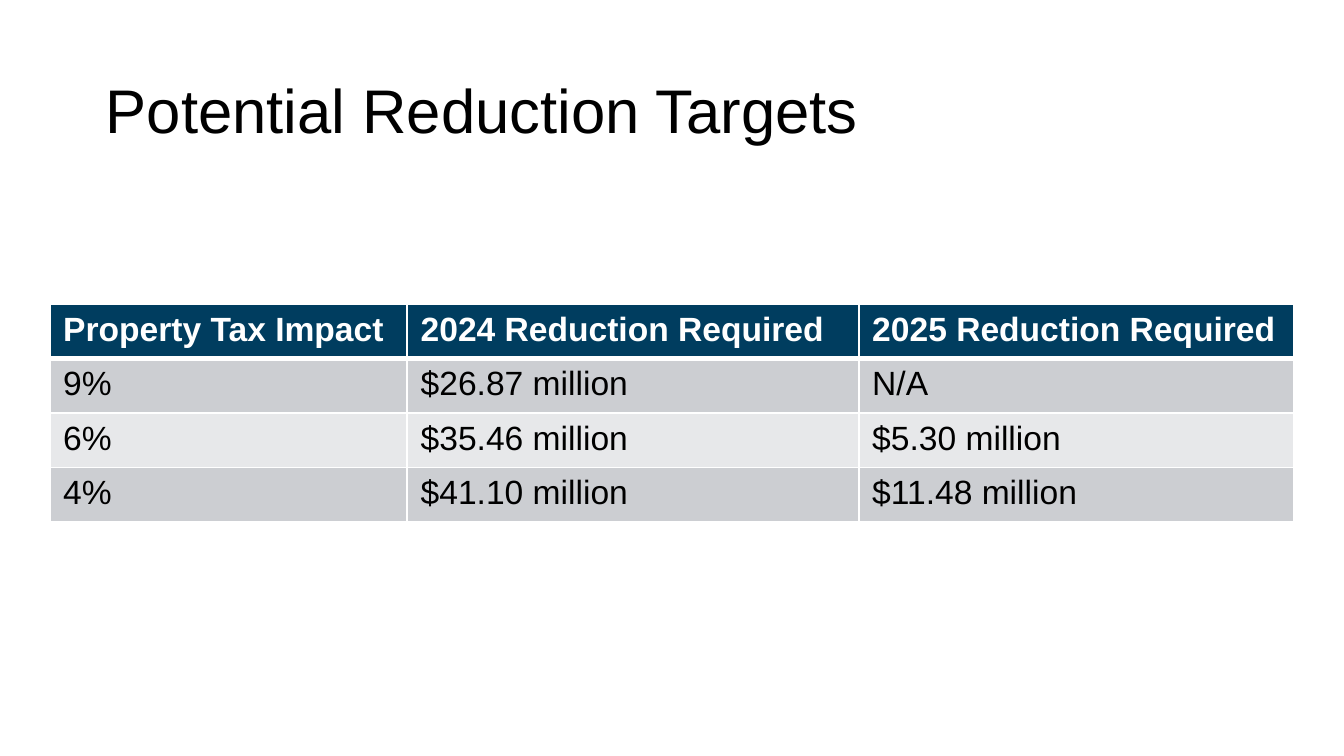
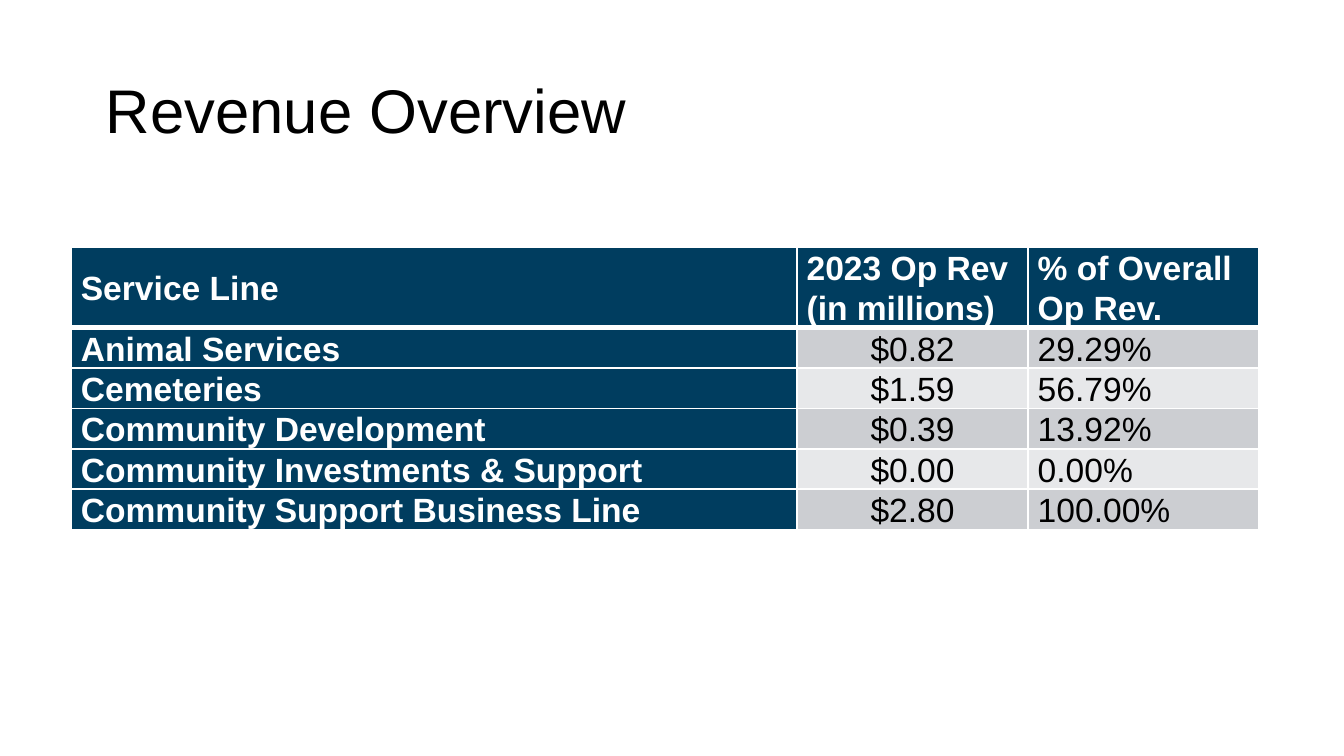
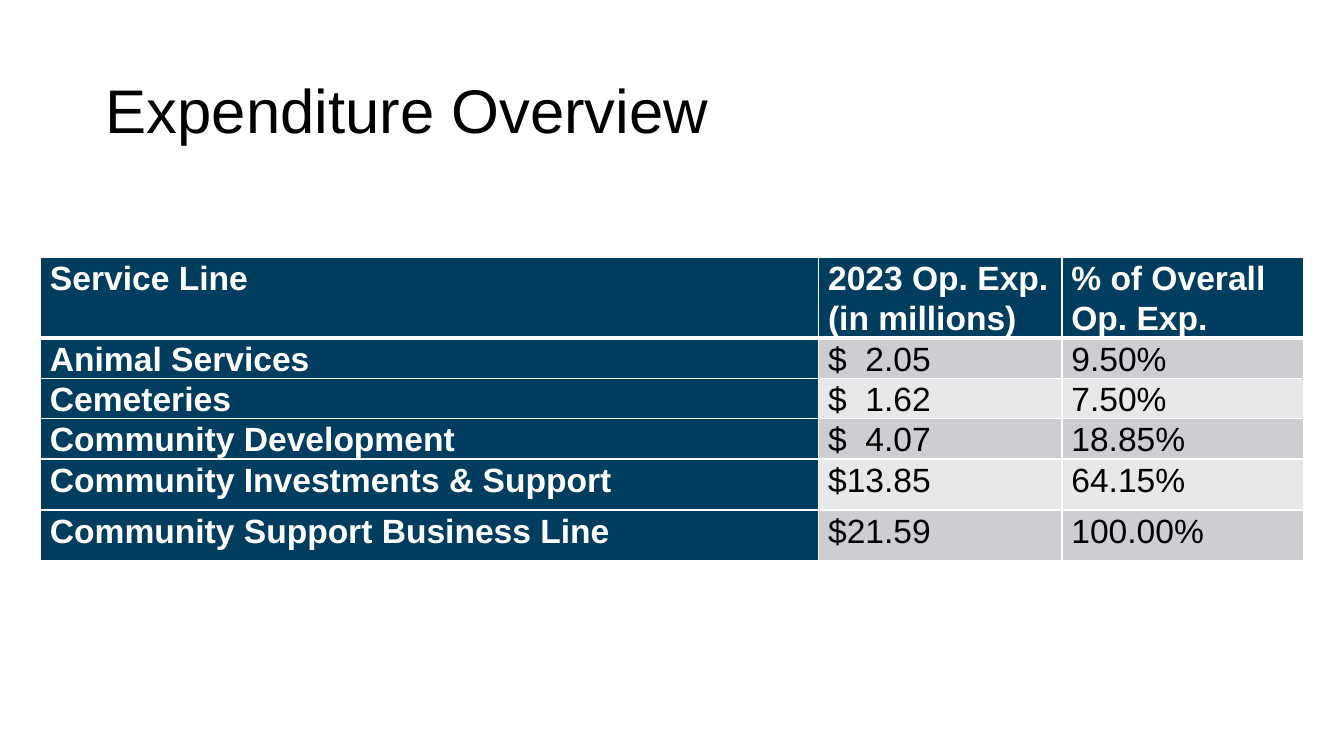
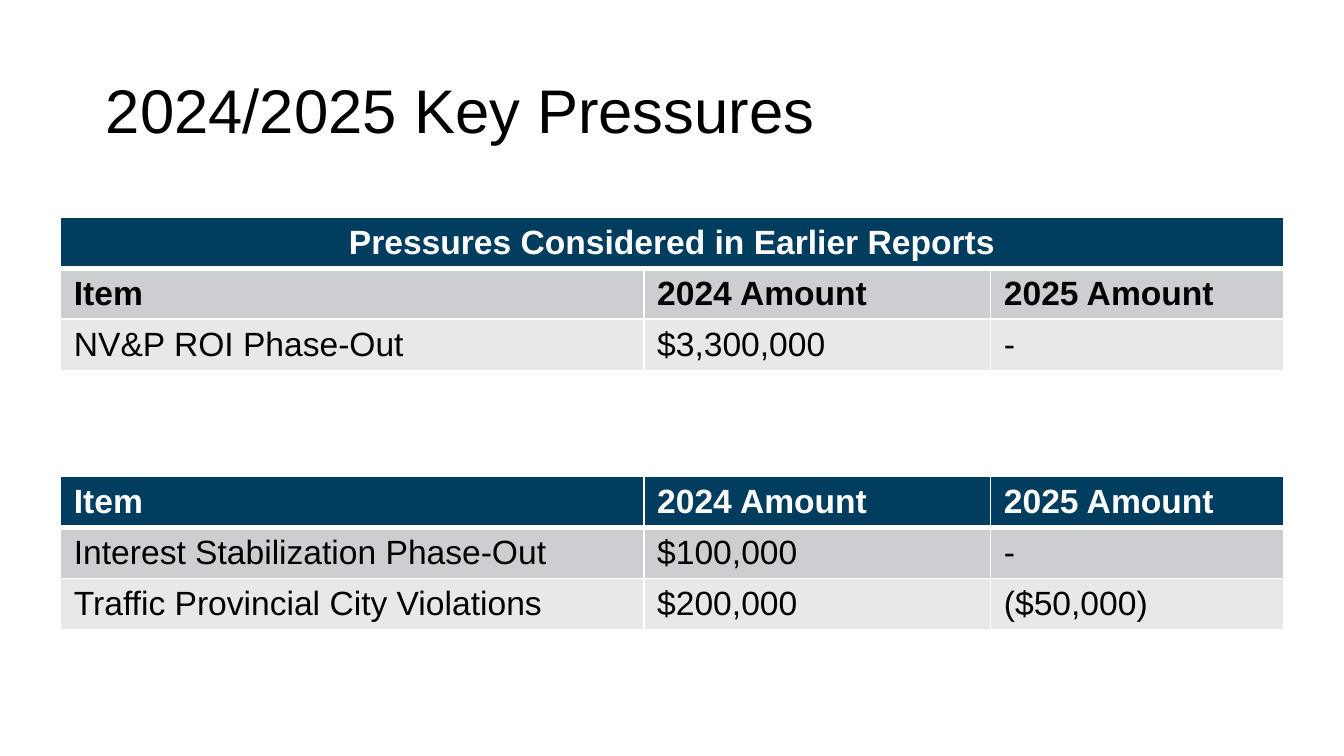
from dataclasses import dataclass

from pptx import Presentation
from pptx.dml.color import RGBColor
from pptx.enum.text import MSO_ANCHOR, MSO_AUTO_SIZE, PP_ALIGN
from pptx.oxml.xmlchemy import OxmlElement
from pptx.util import Emu, Inches, Pt

LEFT, CENTER, JUSTIFY = PP_ALIGN.LEFT, PP_ALIGN.CENTER, PP_ALIGN.JUSTIFY
TOP, MIDDLE = MSO_ANCHOR.TOP, MSO_ANCHOR.MIDDLE
NO_AUTOFIT = MSO_AUTO_SIZE.NONE

SLIDE_WIDTH = Inches(10)
SLIDE_HEIGHT = Emu(SLIDE_WIDTH * 9 // 16)
GRID_COLUMNS = 100
TITLE_ONLY = 5

FONT = "Arial"
TITLE_SIZE, TABLE_SIZE = 33, 18
NAVY, WHITE, BLACK = "003D5F", "FFFFFF", "000000"
BANDS = ("CCCED2", "E7E8EA")
THIN_RULE, HEADER_RULE = 1, 3


@dataclass
class TableLook:
    insets: tuple = (1, 0.5)
    line_spacing: float = 1.0
    anchor: int = TOP
    alignments: tuple = (LEFT, LEFT, LEFT)
    navy_labels: bool = False
    bold_rows: tuple = (0,)
    decimal_tab: float = 0


def grid(units):
    return Emu(round(SLIDE_WIDTH * units / GRID_COLUMNS))


def color(value):
    return RGBColor.from_string(value)


def add_text(paragraph, text, size, hue, bold=False):
    run = paragraph.add_run()
    run.text = text
    run.font.name = FONT
    run.font.size = Pt(size)
    run.font.bold = bold
    run.font.color.rgb = color(hue)


def add_titled_slide(deck, heading):
    slide = deck.slides.add_slide(deck.slide_layouts[TITLE_ONLY])
    title = slide.shapes.title
    title.left, title.top, title.width, title.height = map(grid, (6.88, 3, 86.25, 10.87))
    frame = title.text_frame
    frame.auto_size = NO_AUTOFIT
    frame.vertical_anchor = MIDDLE
    paragraph = frame.paragraphs[0]
    paragraph.alignment = LEFT
    paragraph.line_spacing = 0.9
    add_text(paragraph, heading, TITLE_SIZE, BLACK)
    return slide


def rule_cell(cell, row):
    weights = {
        "L": THIN_RULE,
        "R": THIN_RULE,
        "T": HEADER_RULE if row == 1 else THIN_RULE,
        "B": HEADER_RULE if row == 0 else THIN_RULE,
    }
    properties = cell._tc.get_or_add_tcPr()
    for side, weight in weights.items():
        rule = OxmlElement(f"a:ln{side}")
        rule.set("w", str(Pt(weight)))
        fill = OxmlElement("a:solidFill")
        hue = OxmlElement("a:srgbClr")
        hue.set("val", WHITE)
        fill.append(hue)
        rule.append(fill)
        properties.append(rule)


def add_decimal_tab(paragraph, position):
    stops = OxmlElement("a:tabLst")
    stop = OxmlElement("a:tab")
    stop.set("pos", str(grid(position)))
    stop.set("algn", "dec")
    stops.append(stop)
    paragraph._p.get_or_add_pPr().append(stops)


def fill_cell(cell, text, row, column, look):
    navy = row == 0 or (look.navy_labels and column == 0)
    rule_cell(cell, row)
    cell.fill.solid()
    cell.fill.fore_color.rgb = color(NAVY if navy else BANDS[(row - 1) % 2])
    side, edge = map(grid, look.insets)
    cell.margin_left = cell.margin_right = side
    cell.margin_top = cell.margin_bottom = edge
    cell.vertical_anchor = look.anchor
    paragraph = cell.text_frame.paragraphs[0]
    paragraph.alignment = LEFT if row == 0 else look.alignments[column]
    paragraph.line_spacing = look.line_spacing
    if look.decimal_tab and row and column == 1:
        add_decimal_tab(paragraph, look.decimal_tab)
    if text:
        bold = row in look.bold_rows or navy
        add_text(paragraph, text, TABLE_SIZE, WHITE if navy else BLACK, bold)


def add_grid_table(slide, left, top, widths, heights, rows, look):
    table = slide.shapes.add_table(
        len(rows), len(widths), grid(left), grid(top),
        grid(sum(widths)), grid(sum(heights)),
    ).table
    table.horz_banding = False
    for column, width in zip(table.columns, widths):
        column.width = grid(width)
    for line, height in zip(table.rows, heights):
        line.height = grid(height)
    for row, texts in enumerate(rows):
        for column, text in enumerate(texts):
            fill_cell(table.cell(row, column), text, row, column, look)
    return table


def add_banner(table):
    banner = table.cell(0, 0)
    banner.merge(table.cell(0, len(table.columns) - 1))
    banner.text_frame.paragraphs[0].alignment = CENTER


def add_targets(deck):
    slide = add_titled_slide(deck, "Potential Reduction Targets")
    targets = [
        ("Property Tax Impact", "2024 Reduction Required", "2025 Reduction Required"),
        ("9%", "$26.87 million", "N/A"),
        ("6%", "$35.46 million", "$5.30 million"),
        ("4%", "$41.10 million", "$11.48 million"),
    ]
    add_grid_table(slide, 3.7, 22.65, (26.6, 33.6, 32.4), [4.05] * 4, targets, TableLook())


def add_revenue(deck):
    slide = add_titled_slide(deck, "Revenue Overview")
    revenue = [
        ("Service Line", "2023 Op Rev (in millions)", "% of Overall Op Rev."),
        ("Animal Services", "$0.82", "29.29%"),
        ("Cemeteries", "$1.59", "56.79%"),
        ("Community Development", "$0.39", "13.92%"),
        ("Community Investments & Support", "$0.00", "0.00%"),
        ("Community Support Business Line", "$2.80", "100.00%"),
    ]
    look = TableLook((0.72, 0), 1.07, MIDDLE, (LEFT, CENTER, LEFT), navy_labels=True)
    add_grid_table(slide, 5.3, 18.4, (54, 17.2, 17.2), [6] + [3] * 5, revenue, look)


def add_expenditure(deck):
    slide = add_titled_slide(deck, "Expenditure Overview")
    expenditure = [
        ("Service Line", "2023 Op. Exp. (in millions)", "% of Overall Op. Exp."),
        ("Animal Services", "$\t2.05", "9.50%"),
        ("Cemeteries", "$\t1.62", "7.50%"),
        ("Community Development", "$\t4.07", "18.85%"),
        ("Community Investments & Support", "$13.85", "64.15%"),
        ("Community Support Business Line", "$21.59", "100.00%"),
    ]
    look = TableLook((0.72, 0), 1.07, TOP, (LEFT, JUSTIFY, LEFT),
                     navy_labels=True, decimal_tab=4.17)
    heights = [6] + [3] * 3 + [3.8] * 2
    add_grid_table(slide, 3, 19.15, (57.9, 18.1, 18), heights, expenditure, look)


def add_pressures(deck):
    slide = add_titled_slide(deck, "2024/2025 Key Pressures")
    headings = ("Item", "2024 Amount", "2025 Amount")
    further = [
        headings,
        ("Interest Stabilization Phase-Out", "$100,000", "-"),
        ("Traffic Provincial City Violations", "$200,000", "($50,000)"),
    ]
    earlier = [
        ("Pressures Considered in Earlier Reports", "", ""),
        headings,
        ("NV&P ROI Phase-Out", "$3,300,000", "-"),
    ]
    left, widths, heights = 4.5, (43.4, 25.8, 21.8), [3.78] * 3
    add_grid_table(slide, left, 35.45, widths, heights, further, TableLook())
    add_banner(add_grid_table(slide, left, 16.15, widths, heights, earlier,
                              TableLook(bold_rows=(0, 1))))


def main():
    deck = Presentation()
    deck.slide_width, deck.slide_height = SLIDE_WIDTH, SLIDE_HEIGHT
    for add_section in (add_targets, add_revenue, add_expenditure, add_pressures):
        add_section(deck)
    deck.save("out.pptx")


if __name__ == "__main__":
    main()
